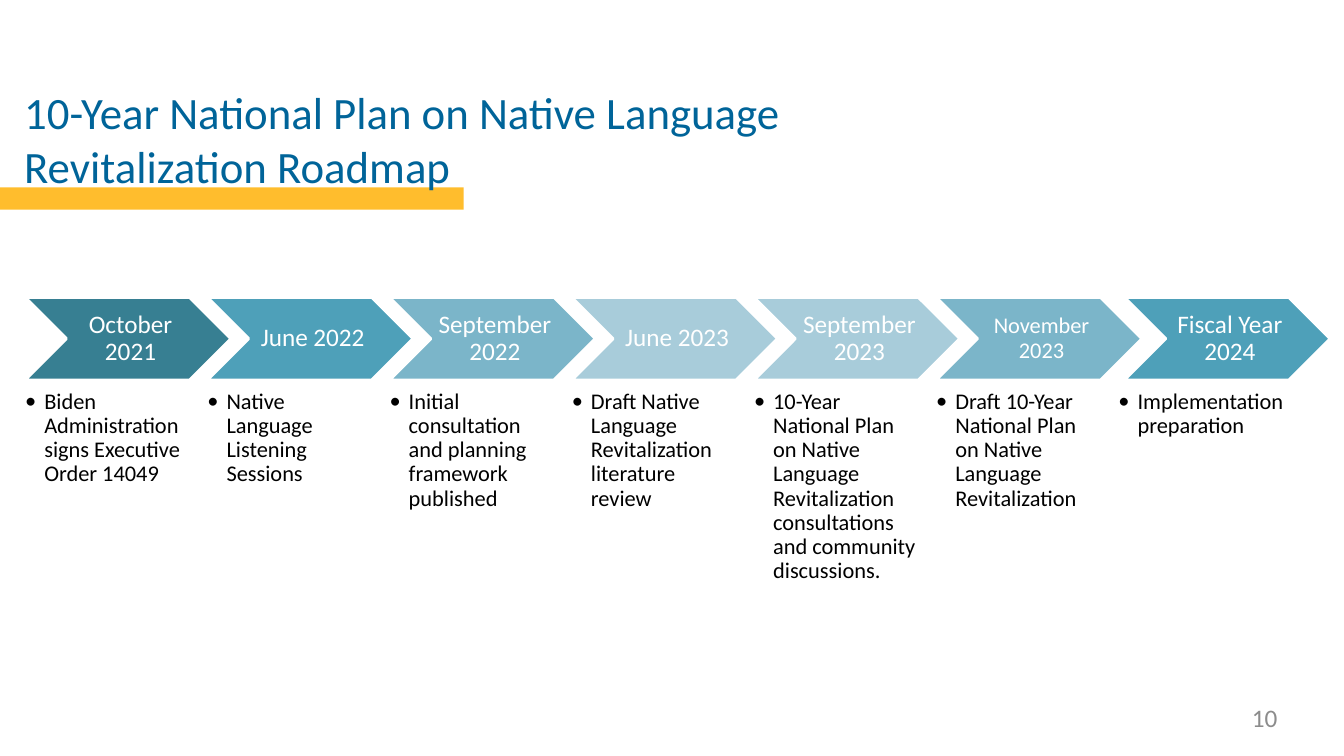
import pptx
import pptx.util
import pptx.dml.color
import pptx.enum.shapes
import pptx.enum.text
from dataclasses import dataclass
from lxml import etree
from pptx.util import Inches, Pt

ALIGN = pptx.enum.text.PP_ALIGN
ANCHOR = pptx.enum.text.MSO_ANCHOR
SHAPE = pptx.enum.shapes.MSO_SHAPE


@dataclass(frozen=True)
class Theme:
    font: str = "Calibri"
    title: str = "006499"
    gold: str = "FFBD2D"
    white: str = "FFFFFF"
    black: str = "000000"
    grey: str = "8C8C8C"
    blues: tuple = ("377F92", "4EA0B9", "7BB5C9", "A8CCDA")
    title_size: int = 32
    label_size: int = 18
    body_size: int = 16


T = Theme()

# Date, shade of blue, label size, milestone
STEPS = [
    ("October 2021", 0, T.label_size, "Biden Administration signs Executive Order 14049"),
    ("June 2022", 1, T.label_size, "Native Language Listening Sessions"),
    ("September 2022", 2, T.label_size,
     "Initial consultation and planning framework published"),
    ("June 2023", 3, T.label_size,
     "Draft Native Language Revitalization literature review"),
    ("September 2023", 3, T.label_size,
     "10-Year National Plan on Native Language Revitalization "
     "consultations and community discussions."),
    ("November 2023", 2, T.body_size,
     "Draft 10-Year National Plan on Native Language Revitalization"),
    ("Fiscal Year 2024", 1, T.label_size, "Implementation preparation"),
]


def rgb(code):
    return pptx.dml.color.RGBColor.from_string(code)


def write(shape, text, size, color, align=ALIGN.LEFT, anchor=ANCHOR.TOP,
          insets=(0, 0, 0, 0), spacing=None):
    tf = shape.text_frame
    tf.word_wrap = True
    tf.auto_size = pptx.enum.text.MSO_AUTO_SIZE.NONE
    tf.vertical_anchor = anchor
    tf.margin_left, tf.margin_top, tf.margin_right, tf.margin_bottom = map(Inches, insets)
    p = tf.paragraphs[0]
    p.text = text
    p.alignment = align
    p.line_spacing = spacing
    p.font.name = T.font
    p.font.size = Pt(size)
    p.font.color.rgb = rgb(color)
    return p


def add_bullet(p, indent):
    pPr = p._p.get_or_add_pPr()
    pPr.set("marL", str(Inches(indent)))
    pPr.set("indent", str(-Inches(indent)))
    defaults = pPr.find(pptx.oxml.ns.qn("a:defRPr"))
    for tag, name, value in (("a:buFont", "typeface", T.font), ("a:buChar", "char", "•")):
        defaults.addprevious(etree.Element(pptx.oxml.ns.qn(tag), {name: value}))


def add_title(s, x, y, w, h):
    # Gold bar, behind the title
    bar = s.shapes.add_shape(SHAPE.RECTANGLE, 0, Inches(y + 1.02), Inches(4.6), Inches(0.22))
    bar.shadow.inherit = False
    bar.fill.solid()
    bar.fill.fore_color.rgb = rgb(T.gold)
    bar.line.fill.background()
    title = s.shapes.title
    title._element.addprevious(bar._element)

    title.left, title.top, title.width, title.height = map(Inches, (x, y, w, h))
    write(title, "10-Year National Plan on Native Language Revitalization Roadmap",
          T.title_size, T.title)


def add_step(s, x, y, w, step, shift=0):
    date, shade, size, milestone = step

    # Dated chevron, with narrow side insets so that the longest month fits
    sp = s.shapes.add_shape(SHAPE.CHEVRON, Inches(x + shift), Inches(y),
                            Inches(2.04), Inches(0.82))
    sp.shadow.inherit = False
    sp.fill.solid()
    sp.fill.fore_color.rgb = rgb(T.blues[shade])
    sp.line.color.rgb = rgb(T.white)
    sp.line.width = Pt(2)
    write(sp, date, size, T.white, ALIGN.CENTER, ANCHOR.MIDDLE,
          (0.05, 0.03, 0, 0.03), 0.9)

    # Milestone below
    box = s.shapes.add_textbox(Inches(x), Inches(y + 0.92), Inches(w), Inches(1.97))
    add_bullet(write(box, milestone, T.body_size, T.black, spacing=0.9), 0.19)


def add_roadmap(s, x, y, w):
    pitch = w / len(STEPS)
    for i, step in enumerate(STEPS[:-1]):
        add_step(s, x + i * pitch, y, 1.64, step)
    # The last step is wider and its chevron sits slightly to the right
    add_step(s, x + w - pitch, y, 1.75, STEPS[-1], shift=0.06)


def add_page_number(s, x, y, w, h):
    box = s.shapes.add_textbox(*map(Inches, (x, y, w, h)))
    write(box, "10", T.label_size, T.grey, ALIGN.RIGHT)


def main():
    prs = pptx.Presentation()
    prs.slide_width, prs.slide_height = Inches(13.33), Inches(7.5)
    s = prs.slides.add_slide(prs.slide_layouts[5])
    add_title(s, 0.24, 0.84, 8.07, 1.62)
    add_roadmap(s, 0.25, 2.95, 12.65)
    add_page_number(s, 9.6, 6.97, 3.07, 0.38)
    prs.save("out.pptx")


if __name__ == "__main__":
    main()
